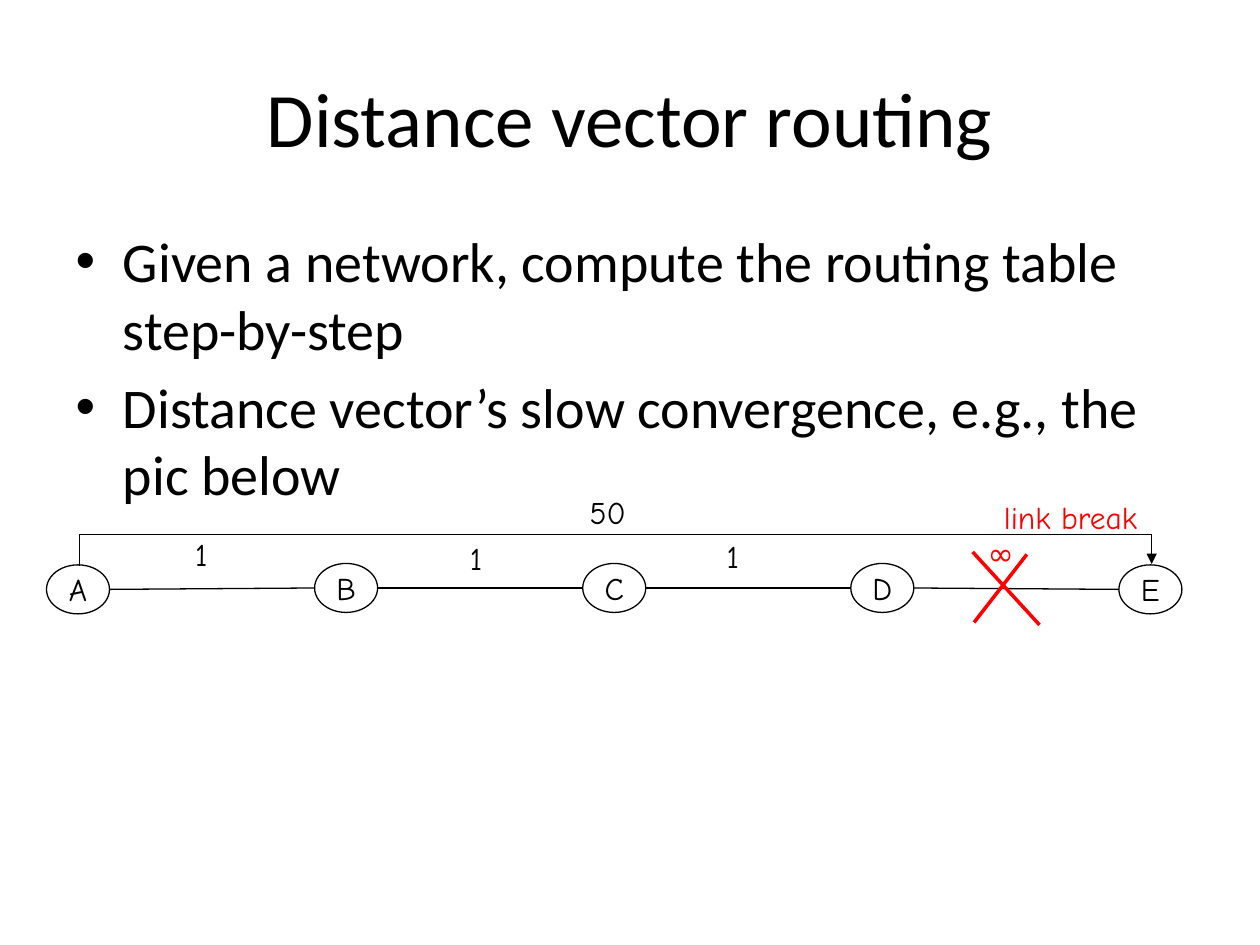
"""Build a slide on distance vector routing with a five-node network and a broken link."""
from lxml import etree
from pptx import Presentation
from pptx import util as u
from pptx.dml.color import RGBColor
from pptx.enum import shapes, text
from pptx.oxml import ns

BLACK = RGBColor(0, 0, 0)
RED = RGBColor(255, 0, 0)
TITLE_FONT, DIAGRAM_FONT = "Calibri", "Comic Neue"

TITLE = "Distance vector routing"
BULLETS = [
    "Given a network, compute the routing table step-by-step",
    "Distance vector’s slow convergence, e.g., the pic below",
]
NODES = [("A", 322.8), ("B", 322), ("C", 322), ("D", 322), ("E", 322.8)]
LABELS = [
    ("1", 104.4, 302.4, 28, BLACK),
    ("1", 261.4, 304.6, 28, BLACK),
    ("1", 408.2, 303.1, 28, BLACK),
    ("∞", 557.3, 301.7, 32.4, RED),
    ("link break", 566.6, 280.8, 97.2, RED),
    ("50", 329.8, 277.9, 36.7, BLACK),
]
CROSS = [(555.8, 315.4, 594, 357.1), (556.6, 355.7, 586.8, 316.8)]

NODE_LEFT, NODE_STEP, NODE_WIDTH, NODE_HEIGHT = 26.6, 153.2, 36, 28
LABEL_HEIGHT = 29
DETOUR_START, DETOUR_END = (45.4, 323.3), (658.1, 322.3)
DETOUR_RISE = 18


def format_paragraph(paragraph, font_name, size, color, alignment=None):
    paragraph.font.name = font_name
    paragraph.font.size = u.Pt(size)
    paragraph.font.color.rgb = color
    if alignment is not None:
        paragraph.alignment = alignment


def place(shape, left, top, width, height):
    shape.left, shape.top = u.Pt(left), u.Pt(top)
    shape.width, shape.height = u.Pt(width), u.Pt(height)


def add_line(slide, ends, color=BLACK, width=0.75, kind=shapes.MSO_CONNECTOR.STRAIGHT):
    connector = slide.shapes.add_connector(kind, *(u.Pt(value) for value in ends))
    connector.line.color.rgb = color
    connector.line.width = u.Pt(width)
    etree.SubElement(connector.element.spPr, ns.qn("a:effectLst"))
    return connector


def add_node(slide, name, left, top):
    node = slide.shapes.add_shape(
        shapes.MSO_SHAPE.OVAL, u.Pt(left), u.Pt(top), u.Pt(NODE_WIDTH), u.Pt(NODE_HEIGHT))
    node.shadow.inherit = False
    node.fill.background()
    node.line.color.rgb = BLACK
    node.line.width = u.Pt(0.75)
    frame = node.text_frame
    frame.text = name
    frame.word_wrap = False
    frame.vertical_anchor = text.MSO_ANCHOR.MIDDLE
    format_paragraph(frame.paragraphs[0], DIAGRAM_FONT, 18, BLACK, text.PP_ALIGN.CENTER)


def add_label(slide, words, left, top, width, color):
    label = slide.shapes.add_textbox(u.Pt(left), u.Pt(top), u.Pt(width), u.Pt(LABEL_HEIGHT))
    frame = label.text_frame
    frame.text = words
    frame.word_wrap = False
    frame.auto_size = text.MSO_AUTO_SIZE.SHAPE_TO_FIT_TEXT
    format_paragraph(frame.paragraphs[0], DIAGRAM_FONT, 18, color)


def add_detour(slide):
    (start_x, start_y), (end_x, end_y) = DETOUR_START, DETOUR_END
    drop, span = start_y - end_y, end_x - start_x
    middle_x, middle_y = (start_x + end_x) / 2, (start_y + end_y) / 2
    ends = (middle_x + drop / 2, middle_y + span / 2, middle_x - drop / 2, middle_y - span / 2)
    connector = add_line(slide, ends, kind=shapes.MSO_CONNECTOR.ELBOW)
    properties = connector.element.spPr
    properties.find(ns.qn("a:xfrm")).set("rot", str(90 * 60000))
    guides = properties.find(ns.qn("a:prstGeom")).find(ns.qn("a:avLst"))
    bend = round(DETOUR_RISE / drop * 100000)
    etree.SubElement(guides, ns.qn("a:gd"), name="adj1", fmla=f"val {bend}")
    etree.SubElement(properties.find(ns.qn("a:ln")), ns.qn("a:tailEnd"), type="triangle")


def main():
    presentation = Presentation()
    presentation.slide_width, presentation.slide_height = u.Pt(720), u.Pt(540)
    slide = presentation.slides.add_slide(presentation.slide_layouts[1])

    title, body = slide.shapes.title, slide.placeholders[1]
    place(title, 36, 21.6, 648, 90)
    title.text_frame.text = TITLE
    format_paragraph(title.text_frame.paragraphs[0], TITLE_FONT, 44, BLACK, text.PP_ALIGN.CENTER)

    place(body, 36, 126, 648, 356.4)
    body.text_frame.text = "\n".join(BULLETS)
    for paragraph in body.text_frame.paragraphs:
        format_paragraph(paragraph, TITLE_FONT, 32, BLACK)

    lefts = [NODE_LEFT + NODE_STEP * index for index in range(len(NODES))]
    for (name, top), left in zip(NODES, lefts):
        add_node(slide, name, left, top)
    middles = [top + NODE_HEIGHT / 2 for _, top in NODES]
    for index in range(len(NODES) - 1):
        add_line(slide, (lefts[index] + NODE_WIDTH, middles[index],
                         lefts[index + 1], middles[index + 1]))

    for stroke in CROSS:
        add_line(slide, stroke, RED, 2)
    add_detour(slide)
    for label in LABELS:
        add_label(slide, *label)
    presentation.save("out.pptx")


if __name__ == "__main__":
    main()
